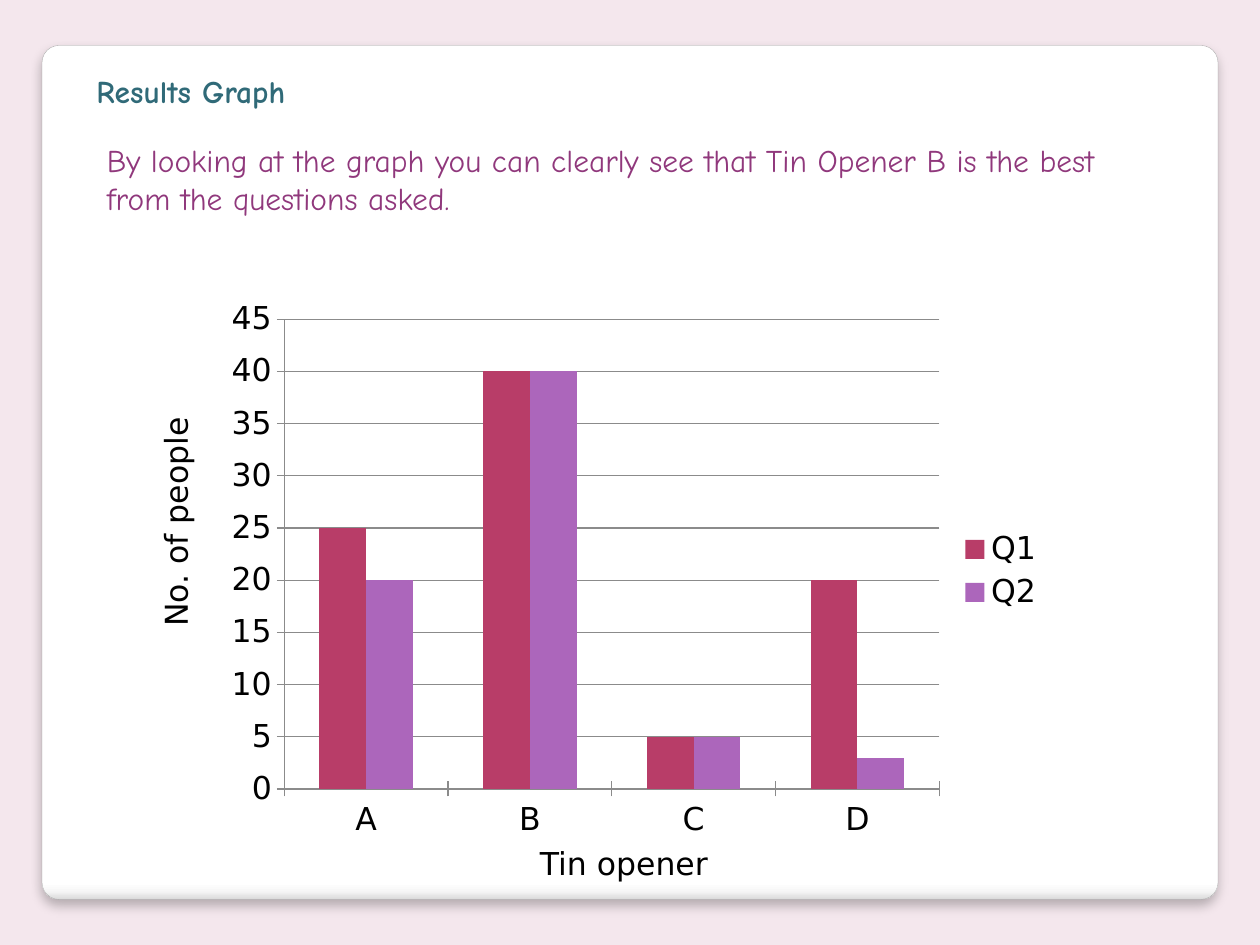
from lxml import etree
from pptx import Presentation
from pptx import util as u
from pptx.chart.data import CategoryChartData
from pptx.dml.color import RGBColor
from pptx.enum import chart as ch, shapes, text
from pptx.oxml import parse_xml
from pptx.oxml.ns import nsdecls, qn

PINK = RGBColor(0xF4, 0xE7, 0xED)
TEAL = RGBColor(0x30, 0x6A, 0x78)
PLUM = RGBColor(0x90, 0x38, 0x7C)
ROSE = RGBColor(0xB8, 0x3D, 0x68)
LILAC = RGBColor(0xAC, 0x66, 0xBB)
BLACK = RGBColor(0, 0, 0)
GREY = RGBColor(0x8B, 0x8B, 0x8B)
EDGE = RGBColor(0xA4, 0xA4, 0xA4)
STOPS = [(0, "FFFFFF"), (98, "FFFFFF"), (99, "F7F7F7"), (100, "DADADA")]
HAND, PLAIN = "Comic Neue", "DejaVu Sans"


class Page:
    """Holds the text style and the current slide, and adds elements to it."""

    def __init__(self, slide, size=18):
        self.slide = slide
        self.size = u.Pt(size)
        fill = slide.background.fill
        fill.solid()
        fill.fore_color.rgb = PINK

    def card(self, *box):
        card = self.slide.shapes.add_shape(
            shapes.MSO_SHAPE.ROUNDED_RECTANGLE, *map(u.Pt, box))
        card.adjustments[0] = 0.02
        card.line.color.rgb = EDGE
        card.line.width = u.Pt(0.16)
        stops = "".join(
            f'<a:gs pos="{pos * 1000}"><a:srgbClr val="{tone}"/></a:gs>'
            for pos, tone in STOPS)
        props = card.fill._xPr
        props.find(qn("a:prstGeom")).addnext(parse_xml(
            f'<a:gradFill {nsdecls("a")}><a:gsLst>{stops}</a:gsLst>'
            '<a:lin ang="5400000" scaled="0"/></a:gradFill>'))
        props.append(parse_xml(
            f'<a:effectLst {nsdecls("a")}><a:outerShdw blurRad="{u.Pt(6)}" '
            f'dist="{u.Pt(4)}" dir="5400000" rotWithShape="0">'
            '<a:srgbClr val="000000"><a:alpha val="25000"/></a:srgbClr>'
            '</a:outerShdw></a:effectLst>'))

    def label(self, words, box, face=PLAIN, tone=BLACK, bold=False, turn=0):
        shape = self.slide.shapes.add_textbox(*map(u.Pt, box))
        shape.rotation = turn
        frame = shape.text_frame
        frame.word_wrap = True
        frame.auto_size = text.MSO_AUTO_SIZE.SHAPE_TO_FIT_TEXT
        frame.text = words
        font = frame.paragraphs[0].runs[0].font
        font.name, font.size, font.bold = face, self.size, bold
        font.color.rgb = tone

    def chart(self, names, rows, box, area):
        data = CategoryChartData()
        data.categories = names
        for name, vals, _ in rows:
            data.add_series(name, vals)
        chart = self.slide.shapes.add_chart(
            ch.XL_CHART_TYPE.COLUMN_CLUSTERED, *map(u.Pt, box), data).chart
        chart.has_title = False
        chart.font.name, chart.font.size = PLAIN, self.size
        chart.font.color.rgb = BLACK
        chart.has_legend = True
        chart.legend.position = ch.XL_LEGEND_POSITION.RIGHT
        chart.legend.include_in_layout = False
        plot = chart.plots[0]
        plot.gap_width, plot.overlap = 150, 0
        plot.vary_by_categories = False
        for bars, (_, _, tone) in zip(plot.series, rows):
            bars.format.fill.solid()
            bars.format.fill.fore_color.rgb = tone
        grid = chart.value_axis
        grid.has_major_gridlines = True
        grid.minimum_scale, grid.maximum_scale, grid.major_unit = 0, 45, 5
        for axis in (chart.category_axis, grid):
            axis.major_tick_mark = ch.XL_TICK_MARK.CROSS
            axis.format.line.color.rgb = GREY
        grid.major_gridlines.format.line.color.rgb = GREY
        self.place(chart, area)

    def place(self, chart, area):
        plot = chart._chartSpace.find(".//" + qn("c:plotArea"))
        for old in plot.findall(qn("c:layout")):
            plot.remove(old)
        layout = etree.Element(qn("c:layout"))
        manual = etree.SubElement(layout, qn("c:manualLayout"))
        parts = [("layoutTarget", "inner"), ("xMode", "edge"), ("yMode", "edge")]
        for tag, val in parts + list(zip("xywh", area)):
            etree.SubElement(manual, qn("c:" + tag)).set("val", str(val))
        plot.insert(0, layout)


def main():
    deck = Presentation()
    deck.slide_width, deck.slide_height = u.Pt(720), u.Pt(540)
    page = Page(deck.slides.add_slide(deck.slide_layouts[6]))
    page.card(24, 26, 672, 488)
    page.chart("ABCD", [("Q1", (25, 40, 5, 20), ROSE),
                        ("Q2", (20, 40, 5, 3), LILAC)],
               (124, 166.5, 480, 319.5), (0.08, 0.05, 0.78, 0.84))
    page.label("Results Graph", (48, 37.5, 164, 29), HAND, TEAL, bold=True)
    page.label("No. of people", (26.5, 277, 147.5, 29), turn=270)
    page.label("Tin opener", (301.5, 479, 113, 29))
    page.label("By looking at the graph you can clearly see that Tin Opener B "
               "is the best from the questions asked.",
               (54, 77, 607, 51), HAND, PLUM)
    deck.save("out.pptx")


if __name__ == "__main__":
    main()
